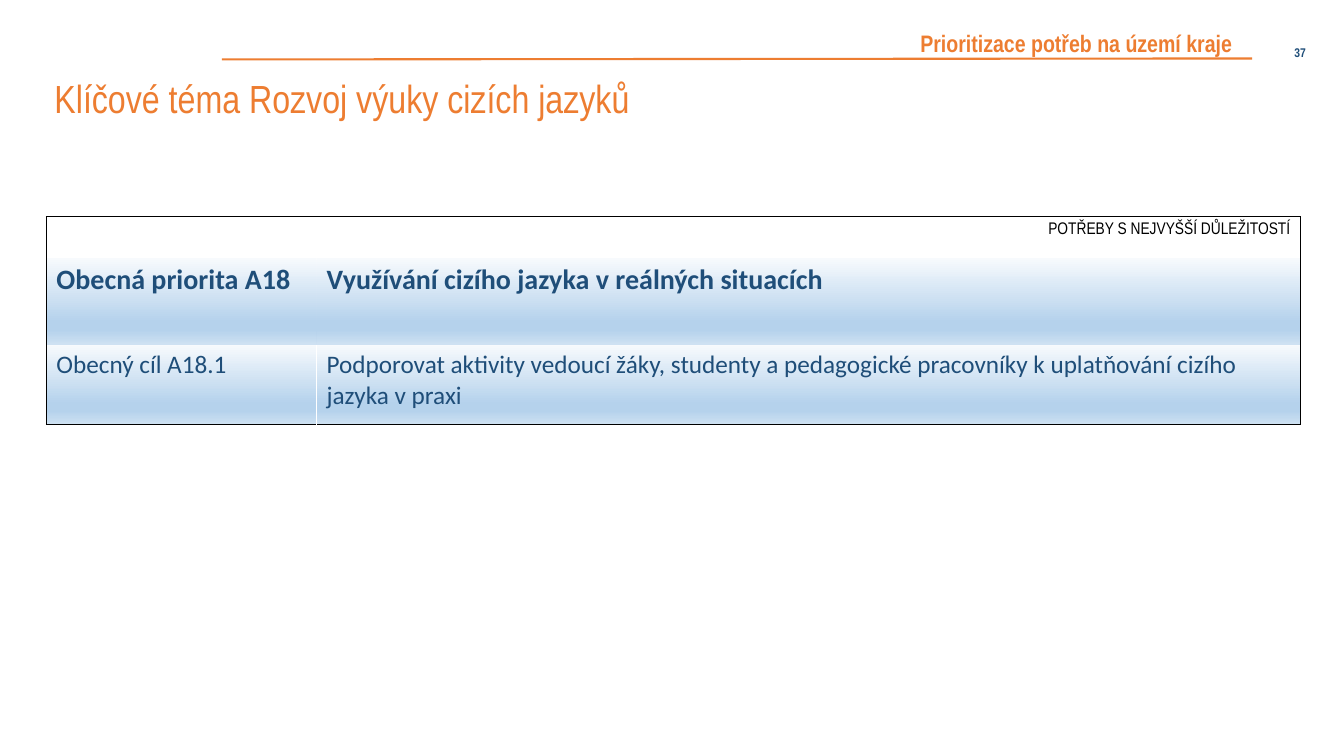
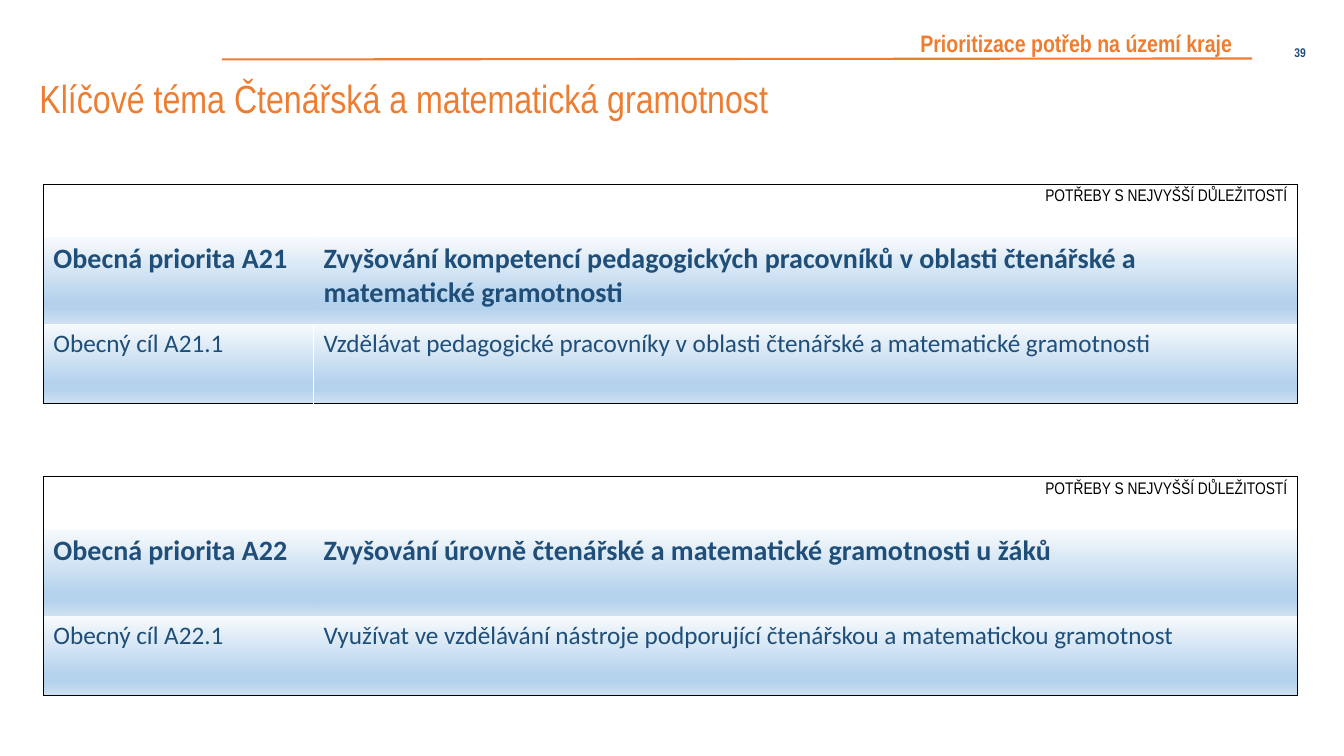
import dataclasses

import pptx
import pptx.dml.color
import pptx.enum.shapes
import pptx.enum.text
import pptx.oxml
import pptx.oxml.ns
import pptx.util
from pptx.util import Inches

ANCHOR = pptx.enum.text.MSO_ANCHOR
ALIGN = pptx.enum.text.PP_ALIGN
NO_STYLE = "{2D5ABB26-0587-4C30-8999-92F81FD0307C}"


@dataclasses.dataclass(frozen=True)
class Theme:
    """Colours, fonts and type sizes shared by the slides."""
    accent: str = "ED7D31"
    navy: str = "1F4E79"
    black: str = "000000"
    white: str = "FFFFFF"
    gradient: tuple = ((0, "F7FAFD"), (74, "B5D2EC"), (83, "B5D2EC"), (100, "CEE1F2"))
    narrow: str = "Arial Narrow"
    body: str = "Calibri"
    title_size: int = 28
    priority_size: int = 20
    goal_size: int = 18
    section_size: int = 17
    label_size: int = 12
    number_size: int = 9
    spacer_size: int = 1


THEME = Theme()
SECTION = "Prioritizace potřeb na území kraje"
TABLE_LABEL = "POTŘEBY S NEJVYŠŠÍ DŮLEŽITOSTÍ"
LABEL_COLUMN = 2.68
ROW_HEIGHTS = {"label": 0.41, "spacer": 0.11, "priority": 0.86, "goal": 0.79}

STYLES = {
    "title": (THEME.accent, {"name": THEME.narrow, "size": THEME.title_size, "bold": False}),
    "section": (THEME.accent, {"name": THEME.narrow, "size": THEME.section_size, "bold": True}),
    "number": (THEME.navy, {"name": THEME.narrow, "size": THEME.number_size, "bold": True}),
    "label": (THEME.black, {"name": THEME.narrow, "size": THEME.label_size, "bold": False}),
    "priority": (THEME.navy, {"name": THEME.body, "size": THEME.priority_size, "bold": True}),
    "goal": (THEME.navy, {"name": THEME.body, "size": THEME.goal_size, "bold": False}),
}

SLIDES = [
    {
        "number": "37",
        "title": "Klíčové téma Rozvoj výuky cizích jazyků",
        "title_left": 0.44,
        "tables": [
            {
                "box": (0.46, 2.15, 12.44),
                "spacer": False,
                "divider": True,
                "priority": ("Obecná priorita A18",
                             "Využívání cizího jazyka v reálných situacích"),
                "goal": ("Obecný cíl A18.1",
                         "Podporovat aktivity vedoucí žáky, studenty a pedagogické "
                         "pracovníky k uplatňování cizího jazyka v praxi"),
            },
        ],
    },
    {
        "number": "39",
        "title": "Klíčové téma Čtenářská a matematická gramotnost",
        "title_left": 0.29,
        "tables": [
            {
                "box": (0.43, 1.83, 12.44),
                "spacer": True,
                "divider": True,
                "priority": ("Obecná priorita A21",
                             "Zvyšování kompetencí pedagogických pracovníků v oblasti "
                             "čtenářské a matematické gramotnosti"),
                "goal": ("Obecný cíl A21.1",
                         "Vzdělávat pedagogické pracovníky v oblasti čtenářské "
                         "a matematické gramotnosti"),
            },
            {
                "box": (0.43, 4.73, 12.44),
                "spacer": True,
                "divider": False,
                "priority": ("Obecná priorita A22",
                             "Zvyšování úrovně čtenářské a matematické gramotnosti u žáků"),
                "goal": ("Obecný cíl A22.1",
                         "Využívat ve vzdělávání nástroje podporující čtenářskou "
                         "a matematickou gramotnost"),
            },
        ],
    },
]


def rgb(colour):
    """Turn a hex string into a colour value."""
    return pptx.dml.color.RGBColor.from_string(colour)


def apply_format(target, values):
    """Set every attribute named in a dict of format values."""
    for name, value in values.items():
        setattr(target, name, value)


def write(frame, text, style, align=ALIGN.LEFT, spacing=None):
    """Write one styled paragraph into a text frame."""
    colour, font = STYLES[style]
    frame.text = text
    paragraph = frame.paragraphs[0]
    apply_format(paragraph, {"alignment": align, "line_spacing": spacing})
    font_target = paragraph.runs[0].font
    apply_format(font_target, {**font, "size": pptx.util.Pt(font["size"])})
    font_target.color.rgb = rgb(colour)


def add_label(slide, box, text, style, anchor, **paragraph_format):
    """Add a wrapped text box at the given box."""
    frame = slide.shapes.add_textbox(*map(Inches, box)).text_frame
    apply_format(frame, {"word_wrap": True, "vertical_anchor": anchor})
    write(frame, text, style, **paragraph_format)


def add_header(slide, number, box):
    """Place the section name, its rule and the slide number in a band."""
    left, top, width, height = box
    right = left + width
    rule_end = right - 0.63
    rule = slide.shapes.add_connector(
        pptx.enum.shapes.MSO_CONNECTOR.STRAIGHT,
        Inches(left), Inches(top + 0.27), Inches(rule_end), Inches(top + 0.26))
    rule.line.color.rgb = rgb(THEME.accent)
    rule.line.width = pptx.util.Pt(1.5)
    effects = pptx.oxml.parse_xml(f"<a:effectLst {pptx.oxml.ns.nsdecls('a')}/>")
    rule._element.spPr.append(effects)
    add_label(slide, (right - 0.79, top, 0.79, height), number, "number",
              ANCHOR.MIDDLE, align=ALIGN.RIGHT)
    add_label(slide, (rule_end - 3.39, top - 0.01, 3.38, 0.31), SECTION, "section",
              ANCHOR.BOTTOM, spacing=0.9)


def place_title(slide, text, box):
    """Move and format the title placeholder."""
    title = slide.shapes.title
    apply_format(title, dict(zip(("left", "top", "width", "height"), map(Inches, box))))
    frame = title.text_frame
    apply_format(frame, {"word_wrap": True, "vertical_anchor": ANCHOR.MIDDLE,
                         "auto_size": pptx.enum.text.MSO_AUTO_SIZE.NONE})
    write(frame, text, "title", spacing=0.9)


def set_borders(cell, borders):
    """Draw the cell's borders, given as side and colour."""
    properties = cell._tc.get_or_add_tcPr()
    for side in "LRTB":
        if side in borders:
            properties.append(pptx.oxml.parse_xml(
                f'<a:ln{side} {pptx.oxml.ns.nsdecls("a")} w="12700"><a:solidFill>'
                f'<a:srgbClr val="{borders[side]}"/></a:solidFill></a:ln{side}>'))


def fill_gradient(cell):
    """Fill a cell with the theme's vertical gradient."""
    stops = "".join(f'<a:gs pos="{position * 1000}"><a:srgbClr val="{colour}"/></a:gs>'
                    for position, colour in THEME.gradient)
    cell._tc.get_or_add_tcPr().append(pptx.oxml.parse_xml(
        f'<a:gradFill {pptx.oxml.ns.nsdecls("a")} rotWithShape="1"><a:gsLst>{stops}</a:gsLst>'
        '<a:lin ang="5400000" scaled="0"/></a:gradFill>'))


def shrink_cell(cell):
    """Let an empty cell be as low as its row."""
    apply_format(cell, {"margin_top": 0, "margin_bottom": 0})
    cell.text_frame.paragraphs[0]._p.append(pptx.oxml.parse_xml(
        f'<a:endParaRPr {pptx.oxml.ns.nsdecls("a")} sz="{THEME.spacer_size * 100}"/>'))


def cell_borders(style, column, divider):
    """Return the outline of the table at one cell, with the goal divider."""
    borders = {"R" if column else "L": THEME.black}
    if style == "label":
        borders["T"] = THEME.black
    if style == "goal":
        borders["B"] = THEME.black
        if divider:
            borders["L" if column else "R"] = THEME.white
    return borders


def add_needs_table(slide, box, spacer, priority, goal, divider):
    """Add a table with a label row, an optional spacer, a priority and a goal."""
    left, top, width = box
    content = {"label": ("", TABLE_LABEL)}
    if spacer:
        content["spacer"] = ("", "")
    content.update(priority=priority, goal=goal)
    heights = [ROW_HEIGHTS[style] for style in content]
    table = slide.shapes.add_table(
        len(content), 2, *map(Inches, (left, top, width, sum(heights)))).table
    apply_format(table, {"first_row": False, "horz_banding": False})
    table._tbl.tblPr.find(pptx.oxml.ns.qn("a:tableStyleId")).text = NO_STYLE
    for column, size in zip(table.columns, (LABEL_COLUMN, width - LABEL_COLUMN)):
        column.width = Inches(size)
    for row, size in zip(table.rows, heights):
        row.height = Inches(size)
    for row, (style, texts) in enumerate(content.items()):
        for column, text in enumerate(texts):
            cell = table.cell(row, column)
            set_borders(cell, cell_borders(style, column, divider))
            if style in ("priority", "goal"):
                fill_gradient(cell)
            else:
                cell.fill.background()
            if style == "spacer":
                shrink_cell(cell)
            if text:
                write(cell.text_frame, text, style,
                      align=ALIGN.RIGHT if style == "label" else ALIGN.LEFT)


def build_topic_slide(presentation, topic):
    """Build one key-topic slide with its tables."""
    slide = presentation.slides.add_slide(presentation.slide_layouts[5])
    left = topic["title_left"]
    place_title(slide, topic["title"], (left, 0.69, 13.33 - left, 0.62))
    add_header(slide, topic["number"], (2.2, 0.32, 10.85, 0.4))
    for table in topic["tables"]:
        add_needs_table(slide, **table)


def main():
    """Build and save the presentation."""
    presentation = pptx.Presentation()
    apply_format(presentation, {"slide_width": Inches(13.33), "slide_height": Inches(7.5)})
    for topic in SLIDES:
        build_topic_slide(presentation, topic)
    presentation.save("out.pptx")


if __name__ == "__main__":
    main()
